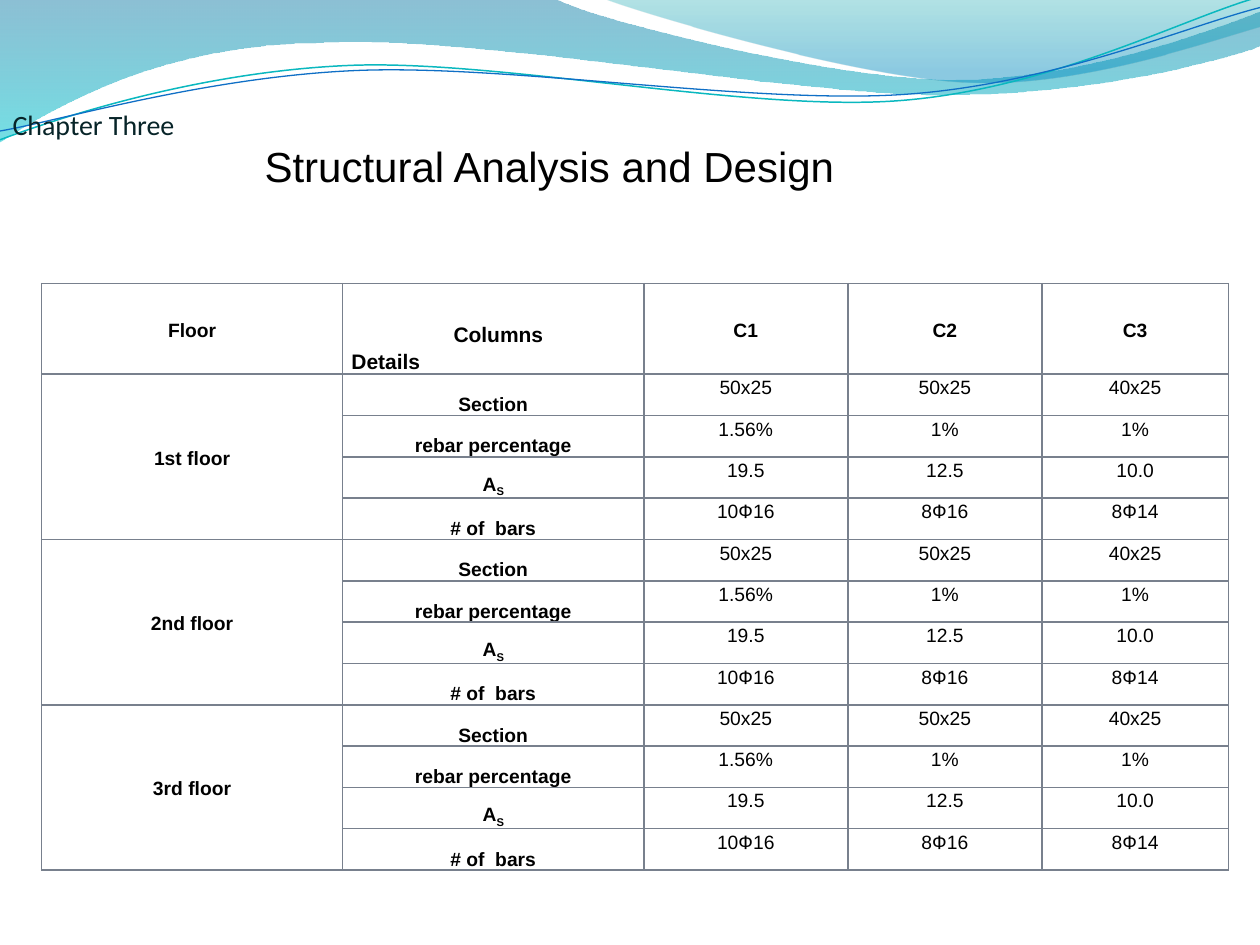
from dataclasses import dataclass

from lxml.etree import SubElement
from pptx import Presentation
from pptx.dml.color import RGBColor as RGB
from pptx.enum.text import MSO_ANCHOR as Anchor, MSO_AUTO_SIZE as AutoSize, PP_ALIGN as Align
from pptx.oxml.ns import qn
from pptx.util import Inches, Pt


@dataclass(frozen=True)
class Theme:
    """Colours, fonts and type sizes of the slide."""
    ink: str = "000000"
    chapter: str = "072428"
    border: str = "78808D"
    teal_line: str = "0AB8BF"
    blue_line: str = "0F6FC6"
    wide_wave: tuple = ((0, "0074A1", 45), (1, "00C6CF", 55))
    right_wave: tuple = ((0, "00A1A9", 30), (0.8, "008BBF", 45))
    font: str = "Arial"
    chapter_font: str = "Calibri"
    title_size: int = 24
    chapter_size: int = 16
    head_size: int = 12
    cell_size: int = 11


THEME = Theme()

WIDE_WAVE = [(0, -0.01), (4.4, -0.01), (4.76, 0.17, 6.64, 0.63, 7.58, 0.63),
             (8.53, 0.63, 9.58, 0.26, 10, 0.09), (10.01, 0.36),
             (9.83, 0.44, 8.7, 0.76, 7.46, 0.75), (6.22, 0.75, 3.82, 0.28, 2.57, 0.34),
             (1.29, 0.35, 0.46, 0.83, -0.01, 1.13), (0, -0.01)]
RIGHT_WAVE = [(4.79, -0.01), (5.09, 0.11, 6.82, 0.62, 7.69, 0.65),
              (8.56, 0.69, 9.61, 0.32, 10, 0.21), (10, 0), (4.79, -0.01)]
TEAL_CURVE = [(0, 1.11), (0.48, 0.93, 1.58, 0.57, 2.77, 0.52),
              (3.95, 0.47, 5.93, 0.89, 7.13, 0.8), (8.33, 0.71, 9.38, 0.15, 9.98, -0.02)]
BLUE_CURVE = [(0, 1.04), (0.47, 0.96, 1.64, 0.61, 2.83, 0.56),
              (4.03, 0.51, 5.97, 0.83, 7.17, 0.75), (8.36, 0.67, 9.41, 0.21, 10, 0.06)]

COLUMN_WIDTHS = (2.39, 2.39, 1.62, 1.54, 1.48)
HEAD_HEIGHT = 0.72
FLOORS = ("1st floor", "2nd floor", "3rd floor")
COLUMNS = ("C1", "C2", "C3")
DETAILS = (
    (("Section",), ("50x25", "50x25", "40x25")),
    (("rebar percentage",), ("1.56%", "1%", "1%")),
    (("A", "S"), ("19.5", "12.5", "10.0")),
    (("# of  bars",), ("10Ф16", "8Ф16", "8Ф14")),
)


def add_outline(s, box, parts, closed):
    """Draw points and cubic curves relative to the box and return the shape."""
    left, top = box[:2]
    points = [(left + Inches(x), top + Inches(y))
              for part in parts for x, y in zip(part[::2], part[1::2])]
    builder = s.shapes.build_freeform(*points[0])
    builder.add_line_segments(points[1:], close=closed)
    sp = builder.convert_to_shape()
    sp.shadow.inherit = False
    segments = iter(list(sp.element.iter(qn("a:lnTo"))))
    for part in parts[1:]:
        segment = next(segments)
        if len(part) == 6:
            curve = segment.makeelement(qn("a:cubicBezTo"))
            segment.addprevious(curve)
            for line in (segment, next(segments), next(segments)):
                curve.append(line[0])
                line.getparent().remove(line)
    return sp


def add_wave(s, box, parts, stops):
    """Draw a wave with a see-through downward gradient."""
    sp = add_outline(s, box, parts, True)
    sp.line.fill.background()
    sp.fill.gradient()
    sp.fill.gradient_angle = 270
    for stop, (position, color, _) in zip(sp.fill.gradient_stops, stops):
        stop.position = position
        stop.color.rgb = RGB.from_string(color)
    for clr, (_, _, opacity) in zip(sp.element.iter(qn("a:srgbClr")), stops):
        SubElement(clr, qn("a:alpha"), val=str(opacity * 1000))


def add_curve(s, box, parts, color, width):
    """Draw a thin open curve."""
    sp = add_outline(s, box, parts, False)
    sp.fill.background()
    sp.line.color.rgb = RGB.from_string(color)
    sp.line.width = Pt(width)


def add_banner(s, box):
    """Draw the waves and curves across the top."""
    add_wave(s, box, WIDE_WAVE, THEME.wide_wave)
    add_wave(s, box, RIGHT_WAVE, THEME.right_wave)
    add_curve(s, box, TEAL_CURVE, THEME.teal_line, 0.85)
    add_curve(s, box, BLUE_CURVE, THEME.blue_line, 0.75)


def style_font(font, name, size, color, bold=False):
    """Set the usual properties of a font."""
    font.name, font.size, font.bold = name, Pt(size), bold
    font.color.rgb = RGB.from_string(color)


def add_title(s, box):
    """Place the chapter name and title in the title placeholder."""
    title = s.shapes.title
    title.left, title.top, title.width, title.height = box
    title.element.getparent().append(title.element)
    tf = title.text_frame
    tf.word_wrap = True
    tf.auto_size = AutoSize.SHAPE_TO_FIT_TEXT
    tf.vertical_anchor = Anchor.MIDDLE
    p = tf.paragraphs[0]
    p.alignment = Align.LEFT
    tabs = SubElement(p._p.get_or_add_pPr(), qn("a:tabLst"))
    for stop in (1, 2):
        SubElement(tabs, qn("a:tab"), pos=str(Inches(stop)), algn="l")
    r = p.add_run()
    r.text = "Chapter Three"
    style_font(r.font, THEME.chapter_font, THEME.chapter_size, THEME.chapter)
    p.add_line_break()
    r = p.add_run()
    r.text = "\t\tStructural Analysis and Design"
    style_font(r.font, THEME.font, THEME.title_size, THEME.ink)


def style_cell(cell):
    """Give a cell its borders, margins and empty fill."""
    tc_pr = cell._tc.get_or_add_tcPr()
    for side in ("lnL", "lnR", "lnT", "lnB"):
        ln = SubElement(tc_pr, qn(f"a:{side}"), w=str(Pt(1)))
        SubElement(SubElement(ln, qn("a:solidFill")), qn("a:srgbClr"), val=THEME.border)
    cell.fill.background()
    cell.margin_left = cell.margin_right = Inches(0.07)
    cell.margin_top = cell.margin_bottom = 0


def add_text(p, runs, size=THEME.cell_size, bold=True, align=Align.CENTER):
    """Write runs in a paragraph, those after the first as subscripts."""
    p.alignment, p.line_spacing = align, 1.15
    style_font(p.font, THEME.font, size, THEME.ink, bold)
    for i, text in enumerate(runs):
        r = p.add_run()
        r.text = text
        if i:
            r.font._element.set("baseline", "-25000")


def fill_cell(cell, runs, anchor=Anchor.MIDDLE, bold=True):
    """Write one centred paragraph in a cell."""
    cell.vertical_anchor = anchor
    add_text(cell.text_frame.paragraphs[0], runs, bold=bold)


def fill_corner(cell):
    """Write the two-line heading over the details."""
    cell.vertical_anchor = Anchor.BOTTOM
    tf = cell.text_frame
    p = tf.paragraphs[0]
    add_text(p, ["Columns"], THEME.head_size, align=Align.LEFT)
    p._p.get_or_add_pPr().set("marL", str(Inches(0.81)))
    add_text(tf.add_paragraph(), ["Details"], THEME.head_size, align=Align.LEFT)


def add_schedule(s, box):
    """Build the table of column details by floor."""
    row_count = 1 + len(FLOORS) * len(DETAILS)
    table = s.shapes.add_table(row_count, len(COLUMN_WIDTHS), *box).table
    table.first_row = table.horz_banding = False
    for column, width in zip(table.columns, COLUMN_WIDTHS):
        column.width = Inches(width)
    body_height = (box[3] - Inches(HEAD_HEIGHT)) // (row_count - 1)
    for i, row in enumerate(table.rows):
        row.height = body_height if i else Inches(HEAD_HEIGHT)
    for cell in table.iter_cells():
        style_cell(cell)
    fill_cell(table.cell(0, 0), ["Floor"])
    fill_corner(table.cell(0, 1))
    for c, name in enumerate(COLUMNS, 2):
        fill_cell(table.cell(0, c), [name])
    for f, floor in enumerate(FLOORS):
        first = 1 + f * len(DETAILS)
        table.cell(first, 0).merge(table.cell(first + len(DETAILS) - 1, 0))
        fill_cell(table.cell(first, 0), [floor])
        for r, (label, values) in enumerate(DETAILS, first):
            fill_cell(table.cell(r, 1), label, Anchor.BOTTOM)
            for c, value in enumerate(values, 2):
                fill_cell(table.cell(r, c), [value], Anchor.TOP, False)


def main():
    """Build and save the slide."""
    prs = Presentation()
    prs.slide_width, prs.slide_height = Inches(10), Inches(7.5)
    s = prs.slides.add_slide(prs.slide_layouts[5])
    add_banner(s, (0, 0, Inches(10), Inches(1.14)))
    add_title(s, (0, Inches(0.8), Inches(10), Inches(0.77)))
    add_schedule(s, (Inches(0.33), Inches(2.25), Inches(9.42), Inches(4.66)))
    prs.save("out.pptx")


if __name__ == "__main__":
    main()
